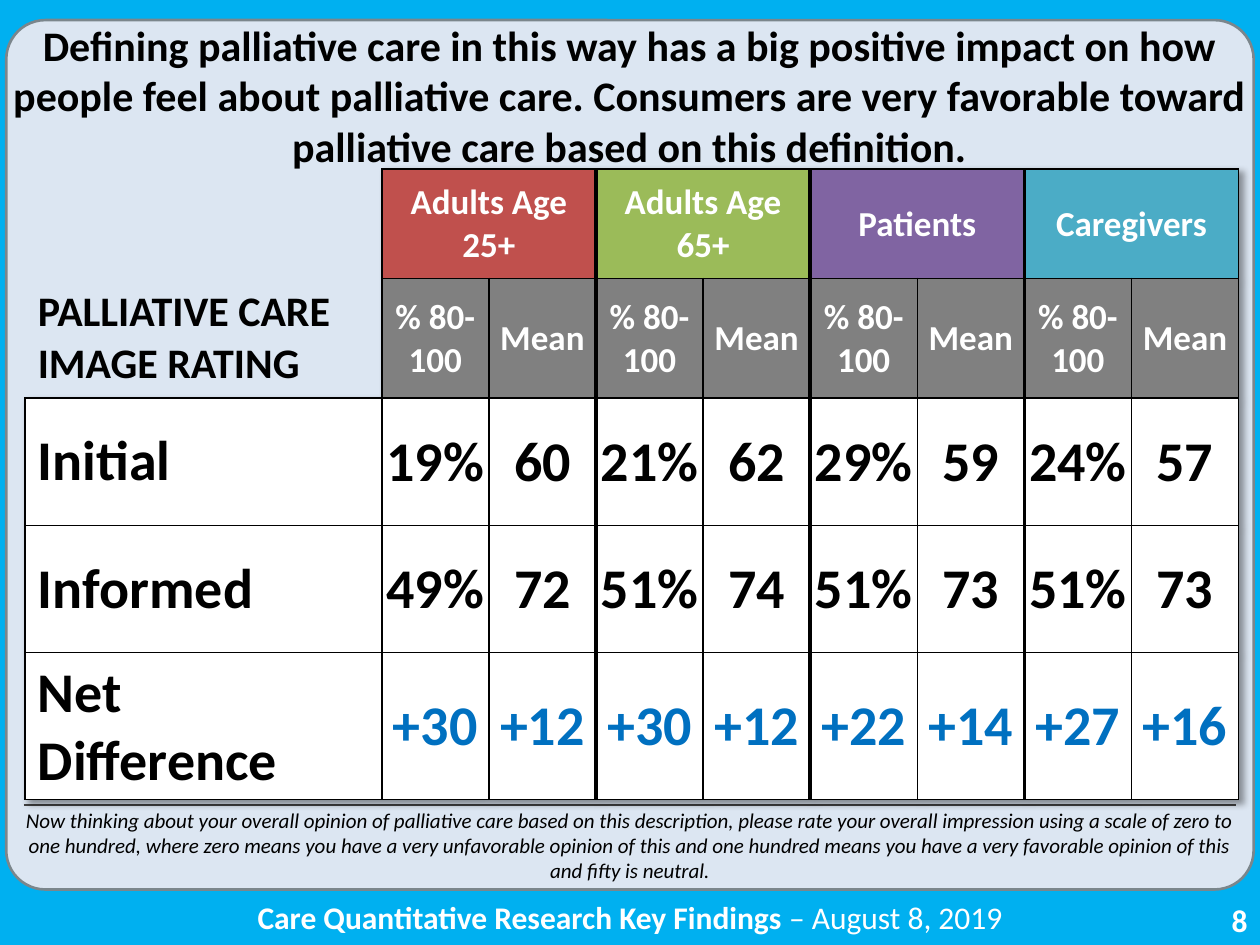
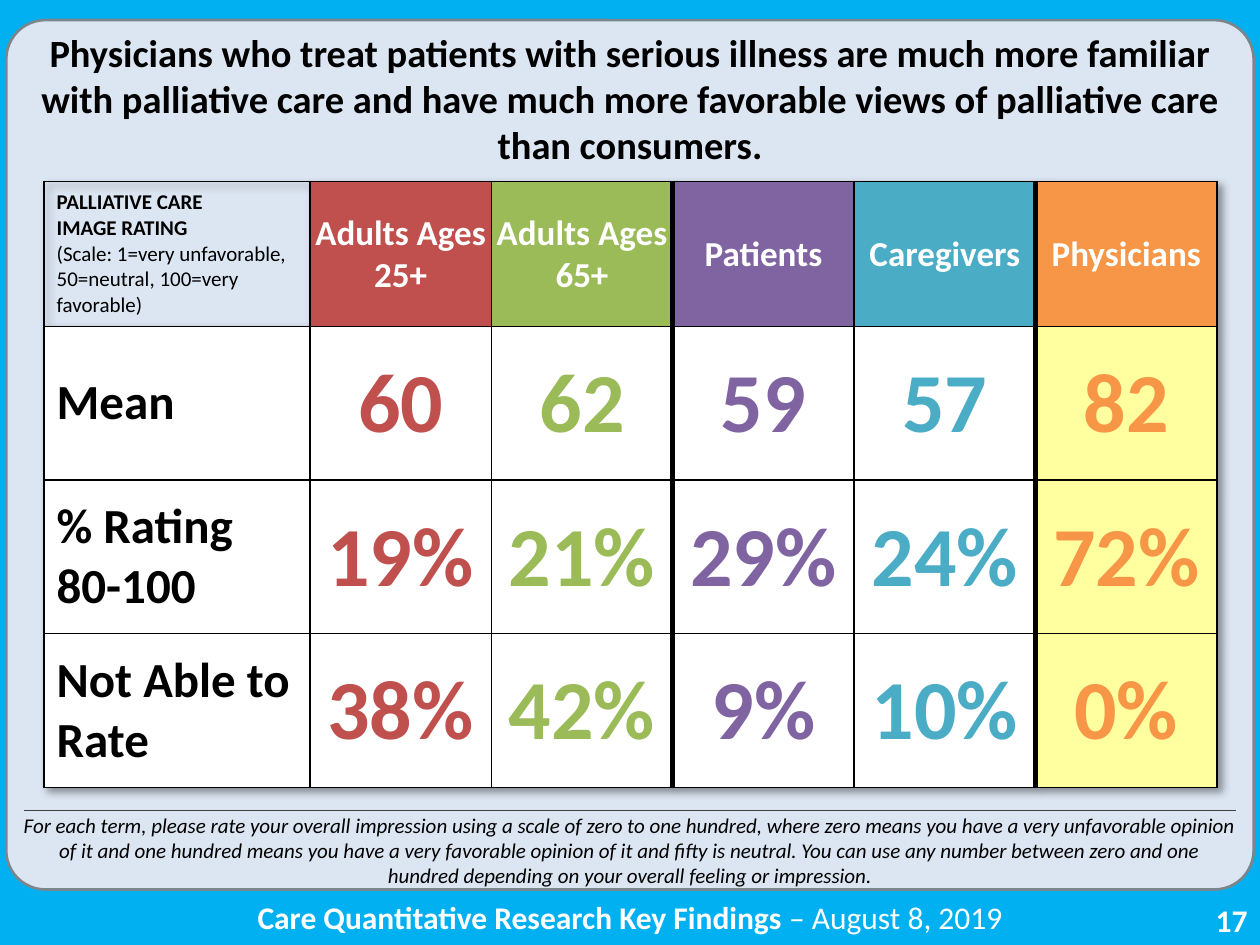
"""Build two palliative care survey slides with rating tables."""
from lxml.etree import SubElement, fromstring
from pptx import Presentation
from pptx.dml.color import RGBColor
from pptx.enum.shapes import MSO_CONNECTOR, MSO_SHAPE
from pptx.enum.text import MSO_ANCHOR, MSO_AUTO_SIZE, PP_ALIGN
from pptx.oxml.ns import nsdecls, qn
from pptx.util import Inches, Pt

FONT = "Calibri"
COLORS = {
    "background": "00B0F0", "panel": "DCE6F2", "panel_line": "7B868C",
    "black": "000000", "white": "FFFFFF", "rule": "404040",
    "subheader": "808080", "difference": "0070C0", "highlight": "FFFF9F",
    "red": "C0504D", "green": "9BBB59", "purple": "8064A2",
    "teal": "4BACC6", "orange": "F79646",
}
FOOTER = [("Care Quantitative Research Key Findings ", True), ("– August 8, 2019", False)]
NO_STYLE = "{2D5ABB26-0587-4C30-8999-92F81FD0307C}"

IMPACT = {
    "number": "8",
    "title": "Defining palliative care in this way has a big positive impact on how people feel "
             "about palliative care. Consumers are very favorable toward palliative care based "
             "on this definition.",
    "title_box": (0.07, 0.42, 9.85, 0.67), "title_size": 24,
    "title_anchor": MSO_ANCHOR.MIDDLE, "title_margins": (0, 0),
    "note": "Now thinking about your overall opinion of palliative care based on this "
            "description, please rate your overall impression using a scale of zero to one "
            "hundred, where zero means you have a very unfavorable opinion of this and one "
            "hundred means you have a very favorable opinion of this and fifty is neutral.",
    "note_top": 6.36,
    "table_at": (0.2, 1.34),
    "columns": [2.83] + [0.85] * 8,
    "rows": [0.87, 0.95, 1.01, 1.01, 1.12],
    "edges": {3: 2.25, 5: 3, 7: 2.25},
    "groups": [("Adults Age 25+", "red"), ("Adults Age 65+", "green"),
               ("Patients", "purple"), ("Caregivers", "teal")],
    "corner": "PALLIATIVE CARE IMAGE RATING",
    "measures": ["% 80-100", "Mean"],
    "ratings": [
        ("Initial", "black", ["19%", "60", "21%", "62", "29%", "59", "24%", "57"]),
        ("Informed", "black", ["49%", "72", "51%", "74", "51%", "73", "51%", "73"]),
        ("Net Difference", "difference",
         ["+30", "+12", "+30", "+12", "+22", "+14", "+27", "+16"]),
    ],
}
PHYSICIANS = {
    "number": "17",
    "title": "Physicians who treat patients with serious illness are much more familiar with "
             "palliative care and have much more favorable views of palliative care than "
             "consumers.",
    "title_box": (0.07, 0.18, 9.86, 1.21), "title_size": 22,
    "title_anchor": MSO_ANCHOR.TOP, "title_margins": (0.1, 0.05),
    "note": "For each term, please rate your overall impression using a scale of zero to one "
            "hundred, where zero means you have a very unfavorable opinion of it and one "
            "hundred means you have a very favorable opinion of it and fifty is neutral. You "
            "can use any number between zero and one hundred depending on your overall feeling "
            "or impression.",
    "note_top": 6.4,
    "table_at": (0.35, 1.44),
    "columns": [2.11] + [1.44] * 5,
    "rows": [1.15] + [1.22] * 3,
    "edges": {3: 3, 5: 3},
    "groups": [("Adults Ages 25+", "red"), ("Adults Ages 65+", "green"),
               ("Patients", "purple"), ("Caregivers", "teal"), ("Physicians", "orange")],
    "corner": [("PALLIATIVE CARE", True), ("IMAGE RATING", True),
               ("(Scale: 1=very unfavorable, 50=neutral, 100=very favorable)", False)],
    "ratings": [
        ("Mean", ["60", "62", "59", "57", "82"]),
        ("% Rating 80-100", ["19%", "21%", "29%", "24%", "72%"]),
        ("Not Able to Rate", ["38%", "42%", "9%", "10%", "0%"]),
    ],
}


def rgb(name):
    return RGBColor.from_string(COLORS[name])


def add_run(paragraph, text, size, color="black", bold=True, italic=False):
    run = paragraph.add_run()
    run.text = text
    font = run.font
    font.name, font.size, font.bold, font.italic = FONT, Pt(size), bold, italic
    font.color.rgb = rgb(color)


def add_text(slide, box, runs, align, size, color, italic=False):
    frame = slide.shapes.add_textbox(*map(Inches, box)).text_frame
    frame.word_wrap = True
    paragraph = frame.paragraphs[0]
    paragraph.alignment = align
    for text, bold in runs:
        add_run(paragraph, text, size, color, bold, italic)


def add_frame(presentation, content):
    slide = presentation.slides.add_slide(presentation.slide_layouts[5])
    slide.background.fill.solid()
    slide.background.fill.fore_color.rgb = rgb("background")

    panel = slide.shapes.add_shape(MSO_SHAPE.ROUNDED_RECTANGLE,
                                   *map(Inches, (0.05, 0.16, 9.9, 6.9)))
    panel.adjustments[0] = 0.045
    panel.shadow.inherit = False
    panel.fill.solid()
    panel.fill.fore_color.rgb = rgb("panel")
    panel.line.color.rgb = rgb("panel_line")
    panel.line.width = Pt(1.5)
    slide.shapes._spTree.insert(2, panel._element)

    title = slide.shapes.title
    title.left, title.top, title.width, title.height = map(Inches, content["title_box"])
    frame = title.text_frame
    frame.word_wrap = True
    frame.auto_size = MSO_AUTO_SIZE.NONE
    frame.vertical_anchor = content["title_anchor"]
    side, end = map(Inches, content["title_margins"])
    frame.margin_left = frame.margin_right = side
    frame.margin_top = frame.margin_bottom = end
    frame.paragraphs[0].alignment = PP_ALIGN.CENTER
    add_run(frame.paragraphs[0], content["title"], content["title_size"])

    add_text(slide, (7.75, 7.1, 2.25, 0.4), [(content["number"], True)],
             PP_ALIGN.RIGHT, 18, "white")
    add_text(slide, (0.79, 7.08, 8.42, 0.4), FOOTER, PP_ALIGN.CENTER, 18, "white")
    note_top = content["note_top"]
    add_text(slide, (0.07, note_top, 9.86, 0.71), [(content["note"], False)],
             PP_ALIGN.CENTER, 12, "black", italic=True)
    rule_top = Inches(note_top + 0.03)
    rule = slide.shapes.add_connector(MSO_CONNECTOR.STRAIGHT, Inches(0.19), rule_top,
                                      Inches(9.81), rule_top)
    rule.line.color.rgb = rgb("rule")
    rule.line.width = Pt(0.75)
    SubElement(rule._element.spPr, qn("a:effectLst"))
    return slide


def add_grid(slide, content):
    columns, rows = content["columns"], content["rows"]
    left, top = content["table_at"]
    table = slide.shapes.add_table(len(rows), len(columns), *map(
        Inches, (left, top, sum(columns), sum(rows)))).table
    for column, width in zip(table.columns, columns):
        column.width = Inches(width)
    for row, height in zip(table.rows, rows):
        row.height = Inches(height)
    table.first_row = table.horz_banding = False
    properties = table._tbl.tblPr
    properties.find(qn("a:tableStyleId")).text = NO_STYLE
    properties.insert(0, fromstring(
        f'<a:effectLst {nsdecls("a")}><a:outerShdw blurRad="50800" dist="38100" dir="2700000" '
        f'algn="tl" rotWithShape="0"><a:srgbClr val="{COLORS["black"]}"><a:alpha val="40000"/>'
        '</a:srgbClr></a:outerShdw></a:effectLst>'))
    return table


def set_borders(cell, **widths):
    properties = cell._tc.get_or_add_tcPr()
    for index, side in enumerate("LRTB"):
        width = widths.get(side, 0)
        paint = (f'<a:solidFill><a:srgbClr val="{COLORS["black"]}"/></a:solidFill>'
                 if width else "<a:noFill/>")
        properties.insert(index, fromstring(
            f'<a:ln{side} {nsdecls("a")} w="{Pt(width)}">{paint}</a:ln{side}>'))


def fill_cell(cell, text, size, color="black", fill=None, label=False):
    cell.vertical_anchor = MSO_ANCHOR.MIDDLE
    if not label:
        cell.margin_left = cell.margin_right = cell.margin_top = Inches(0.01)
        cell.margin_bottom = 0
    lines = [(text, True)] if isinstance(text, str) else text
    frame = cell.text_frame
    for index, (line, bold) in enumerate(lines):
        paragraph = frame.add_paragraph() if index else frame.paragraphs[0]
        paragraph.alignment = PP_ALIGN.LEFT if label else PP_ALIGN.CENTER
        add_run(paragraph, line, size, color, bold)
    if fill:
        cell.fill.solid()
        cell.fill.fore_color.rgb = rgb(fill)
    else:
        cell.fill.background()


def outline_cells(table, edges, open_cells=None):
    for row_index, row in enumerate(table.rows):
        for index, cell in enumerate(row.cells):
            span = cell.span_width if cell.is_merge_origin else 1
            widths = {"L": edges.get(index, 1), "R": edges.get(index + span, 1), "T": 1, "B": 1}
            set_borders(cell, **(open_cells or {}).get((row_index, index), widths))


def build_impact(presentation):
    content = IMPACT
    table = add_grid(add_frame(presentation, content), content)
    table.cell(0, 0).fill.background()
    fill_cell(table.cell(1, 0), content["corner"], 24, label=True)
    measures = content["measures"]
    for group, (name, color) in enumerate(content["groups"]):
        first = 1 + group * len(measures)
        table.cell(0, first).merge(table.cell(0, first + len(measures) - 1))
        fill_cell(table.cell(0, first), name, 20, "white", color)
        for offset, measure in enumerate(measures):
            fill_cell(table.cell(1, first + offset), measure, 20, "white", "subheader")
    for row, (label, color, values) in enumerate(content["ratings"], 2):
        fill_cell(table.cell(row, 0), label, 32, fill="white", label=True)
        for column, value in enumerate(values, 1):
            fill_cell(table.cell(row, column), value, 32, color, "white")
    outline_cells(table, content["edges"], {(0, 0): {"R": 1}, (1, 0): {"R": 1, "B": 1}})


def build_physicians(presentation):
    content = PHYSICIANS
    table = add_grid(add_frame(presentation, content), content)
    fill_cell(table.cell(0, 0), content["corner"], 12, label=True)
    for column, (name, color) in enumerate(content["groups"], 1):
        fill_cell(table.cell(0, column), name, 20, "white", color)
    for row, (label, values) in enumerate(content["ratings"], 1):
        fill_cell(table.cell(row, 0), label, 28, fill="white", label=True)
        for column, (value, (name, color)) in enumerate(zip(values, content["groups"]), 1):
            fill = "highlight" if name == "Physicians" else "white"
            fill_cell(table.cell(row, column), value, 48, color, fill)
    outline_cells(table, content["edges"])


def main():
    presentation = Presentation()
    presentation.slide_width, presentation.slide_height = Inches(10), Inches(7.5)
    build_impact(presentation)
    build_physicians(presentation)
    presentation.save("out.pptx")


if __name__ == "__main__":
    main()
